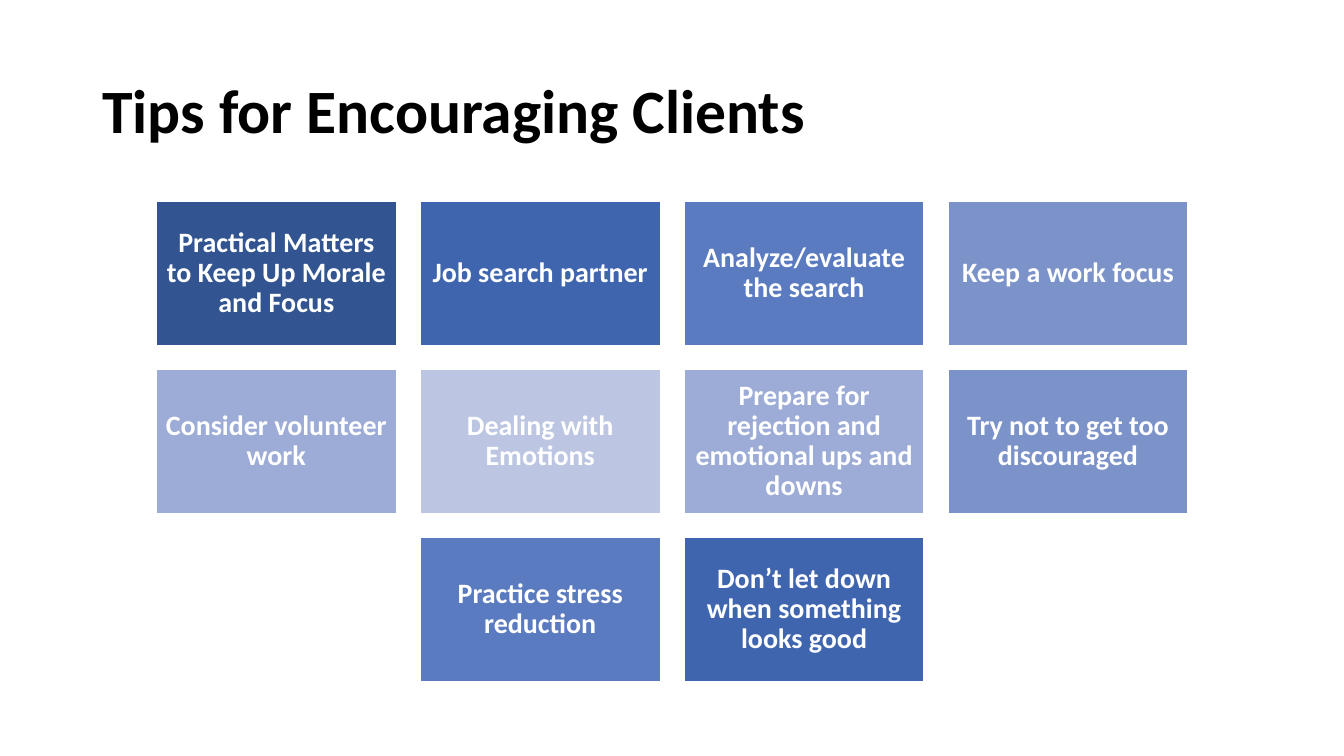
from pptx import Presentation
from pptx.dml.color import RGBColor
from pptx.enum.shapes import MSO_SHAPE
from pptx.enum.text import MSO_ANCHOR, PP_ALIGN
from pptx.util import Cm, Pt

FONT = "Calibri"
BLACK = RGBColor(0x00, 0x00, 0x00)
WHITE = RGBColor(0xFF, 0xFF, 0xFF)
NAVY = RGBColor(0x32, 0x54, 0x91)
ROYAL = RGBColor(0x40, 0x65, 0xAF)
BLUE = RGBColor(0x5B, 0x7B, 0xC0)
SOFT = RGBColor(0x7C, 0x93, 0xCA)
PALE = RGBColor(0x9D, 0xAC, 0xD6)
MIST = RGBColor(0xBC, 0xC6, 0xE2)

# Grid of tiles, in centimetres
COLS = 4
LEFT, TOP = 3.94, 5.08
WIDTH, HEIGHT = 6.05, 3.63
STEP_X, STEP_Y = 6.65, 4.23

TIPS = [
    ("Practical Matters to Keep Up Morale and Focus", NAVY),
    ("Job search partner", ROYAL),
    ("Analyze/evaluate the search", BLUE),
    ("Keep a work focus", SOFT),
    ("Consider volunteer work", PALE),
    ("Dealing with Emotions", MIST),
    ("Prepare for rejection and emotional ups and downs", PALE),
    ("Try not to get too discouraged", SOFT),
    ("Practice stress reduction", BLUE),
    ("Don’t let down when something looks good", ROYAL),
]


def write(shape, text, size, color, align):
    """Put one bold run, centred vertically, into a shape."""
    frame = shape.text_frame
    frame.word_wrap = True
    frame.vertical_anchor = MSO_ANCHOR.MIDDLE
    para = frame.paragraphs[0]
    para.alignment = align
    para.line_spacing = 0.9
    run = para.add_run()
    run.text = text
    run.font.name = FONT
    run.font.size = Pt(size)
    run.font.bold = True
    run.font.color.rgb = color
    return frame


def add_title(slide, text):
    box = slide.shapes.add_textbox(Cm(2.33), Cm(1.01), Cm(29.21), Cm(3.68))
    write(box, text, 44, BLACK, PP_ALIGN.LEFT)


def add_tile(slide, x, y, text, fill):
    tile = slide.shapes.add_shape(
        MSO_SHAPE.RECTANGLE, Cm(x), Cm(y), Cm(WIDTH), Cm(HEIGHT))
    tile.shadow.inherit = False
    tile.fill.solid()
    tile.fill.fore_color.rgb = fill
    tile.line.color.rgb = WHITE
    tile.line.width = Pt(1)
    frame = write(tile, text, 20, WHITE, PP_ALIGN.CENTER)
    frame.margin_left = frame.margin_right = Cm(0.2)
    frame.margin_top = frame.margin_bottom = Cm(0.2)


def add_grid(slide, tips):
    """Fill rows from the left; a short last row is centred."""
    for start in range(0, len(tips), COLS):
        row = tips[start:start + COLS]
        x = LEFT + (COLS - len(row)) * STEP_X / 2
        y = TOP + start // COLS * STEP_Y
        for col, (text, fill) in enumerate(row):
            add_tile(slide, x + col * STEP_X, y, text, fill)


def main():
    deck = Presentation()
    deck.slide_width, deck.slide_height = Cm(33.87), Cm(19.05)
    slide = deck.slides.add_slide(deck.slide_layouts[6])

    # Heading
    add_title(slide, "Tips for Encouraging Clients")

    # Tiles
    add_grid(slide, TIPS)

    deck.save("out.pptx")


if __name__ == "__main__":
    main()
